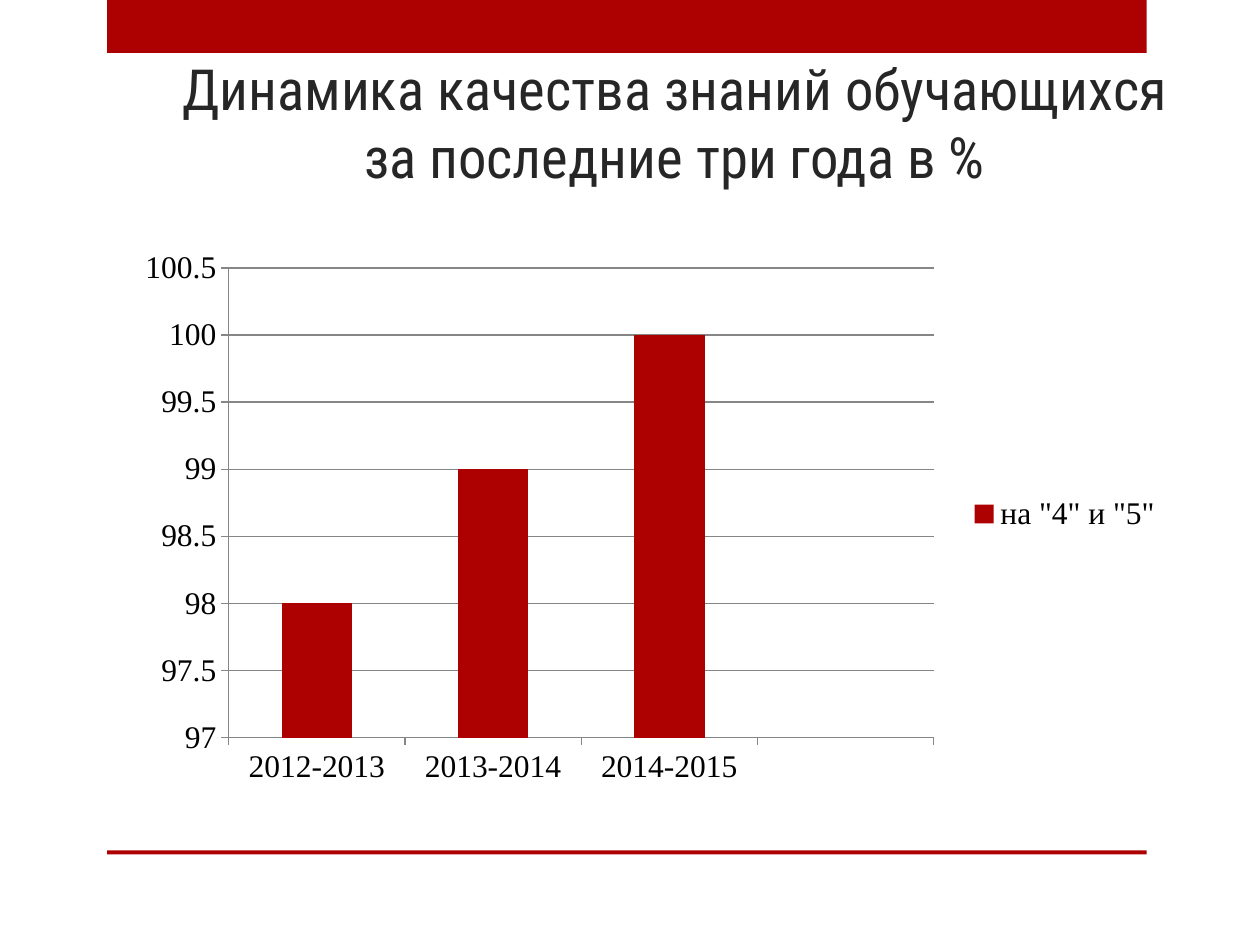
"""Build a slide with a column chart of pupils' results over three school years."""
from lxml.etree import SubElement
from pptx import Presentation
from pptx.chart.data import CategoryChartData
from pptx.dml.color import RGBColor
from pptx.enum.chart import XL_CHART_TYPE as CT, XL_LEGEND_POSITION as LP, XL_TICK_MARK as TM
from pptx.enum.shapes import MSO_SHAPE
from pptx.enum.text import MSO_ANCHOR, MSO_AUTO_SIZE, PP_ALIGN
from pptx.oxml.ns import qn
from pptx.util import Pt

RED = RGBColor(0xAD, 0x01, 0x01)
DARK = RGBColor(0x26, 0x26, 0x26)
BLACK = RGBColor(0, 0, 0)
GRAY = RGBColor(0x86, 0x86, 0x86)

TITLE = "Динамика качества знаний обучающихся за последние три года в %"
TITLE_BOX = (93.6, -13.7, 584, 126)
BARS = [(61.2, 0, 594, 30.2), (61.2, 486, 594, 2.2)]
CHART_BOX = (70.6, 133.9, 601.2, 319.7)
CATEGORIES = ["2012-2013", "2013-2014", "2014-2015", ""]
SERIES = ('на "4" и "5"', [98, 99, 100, None])
PLOT = [("layoutTarget", "inner"), ("xMode", "edge"), ("yMode", "edge"),
        ("x", 0.1), ("y", 0.06), ("w", 0.67), ("h", 0.84)]


def place(sp, box):
    sp.left, sp.top, sp.width, sp.height = map(Pt, box)


def add_title(s):
    sp = s.shapes.title
    place(sp, TITLE_BOX)
    tf = sp.text_frame
    tf.word_wrap = True
    tf.auto_size = MSO_AUTO_SIZE.NONE
    tf.vertical_anchor = MSO_ANCHOR.BOTTOM
    p = tf.paragraphs[0]
    p.alignment = PP_ALIGN.CENTER
    r = p.add_run()
    r.text = TITLE
    r.font.name, r.font.size = "Roboto Condensed", Pt(32.4)
    r.font.color.rgb = DARK


def add_bar(s, box):
    sp = s.shapes.add_shape(MSO_SHAPE.RECTANGLE, *map(Pt, box))
    sp.shadow.inherit = False
    sp.fill.solid()
    sp.fill.fore_color.rgb = RED
    sp.line.fill.background()


def set_plot_layout(chart):
    area = chart.element.find(".//" + qn("c:plotArea"))
    layout = area.find(qn("c:layout"))
    if layout is None:
        layout = SubElement(area, qn("c:layout"))
        area.insert(0, layout)
    manual = SubElement(layout, qn("c:manualLayout"))
    for tag, value in PLOT:
        SubElement(manual, qn("c:" + tag)).set("val", str(value))


def add_chart(s):
    data = CategoryChartData()
    data.categories = CATEGORIES
    data.add_series(*SERIES)
    chart = s.shapes.add_chart(CT.COLUMN_CLUSTERED, *map(Pt, CHART_BOX), data).chart
    chart.has_title = False
    chart.font.name, chart.font.size = "Times New Roman", Pt(18)
    chart.font.color.rgb = BLACK
    chart.has_legend = True
    chart.legend.position = LP.RIGHT
    chart.legend.include_in_layout = False

    plot = chart.plots[0]
    plot.gap_width = 150
    plot.vary_by_categories = False
    fill = plot.series[0].format.fill
    fill.solid()
    fill.fore_color.rgb = RED

    values = chart.value_axis
    values.minimum_scale, values.maximum_scale, values.major_unit = 97, 100.5, 0.5
    values.has_major_gridlines = True
    for axis in (chart.category_axis, values):
        axis.major_tick_mark, axis.minor_tick_mark = TM.OUTSIDE, TM.NONE
    for part in (chart.category_axis, values, values.major_gridlines):
        part.format.line.color.rgb = GRAY
        part.format.line.width = Pt(0.75)
    set_plot_layout(chart)


def main():
    prs = Presentation()
    prs.slide_width, prs.slide_height = Pt(720), Pt(540)
    s = prs.slides.add_slide(prs.slide_layouts[5])
    for box in BARS:
        add_bar(s, box)
    add_title(s)
    add_chart(s)
    prs.save("out.pptx")


if __name__ == "__main__":
    main()
